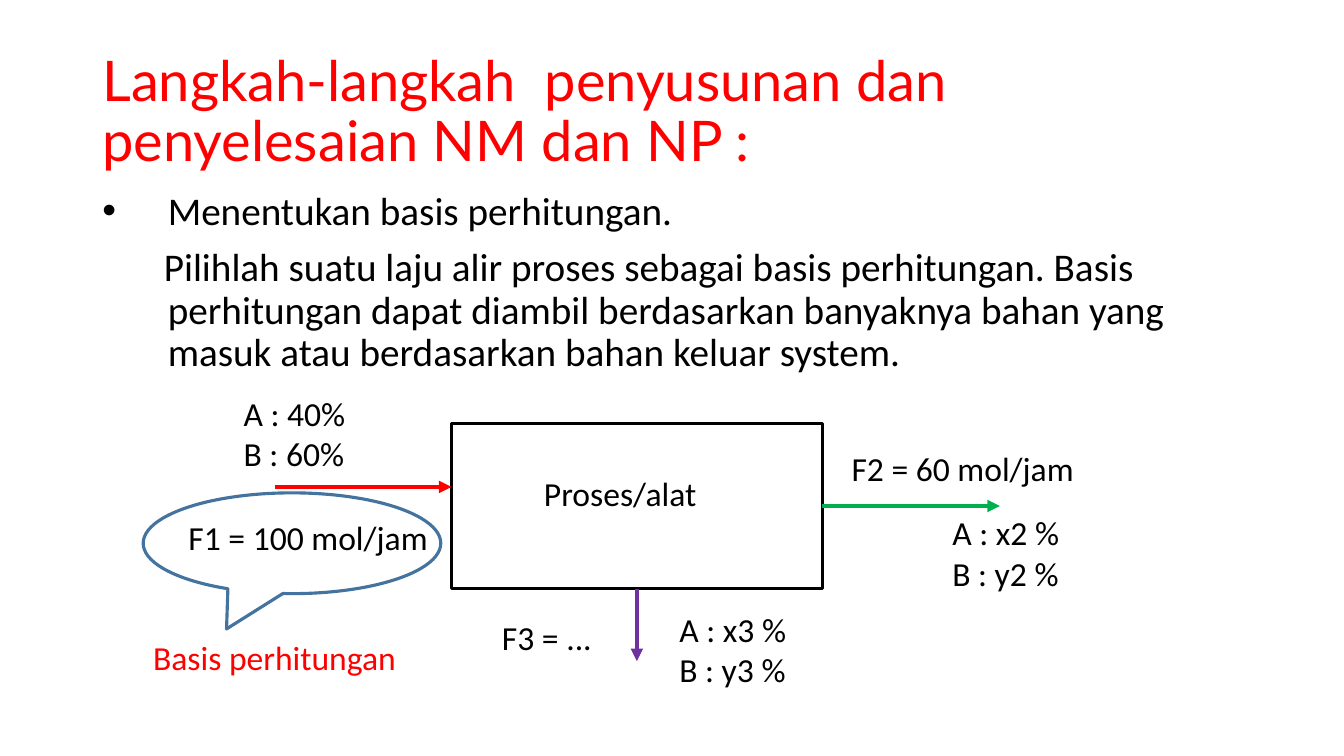
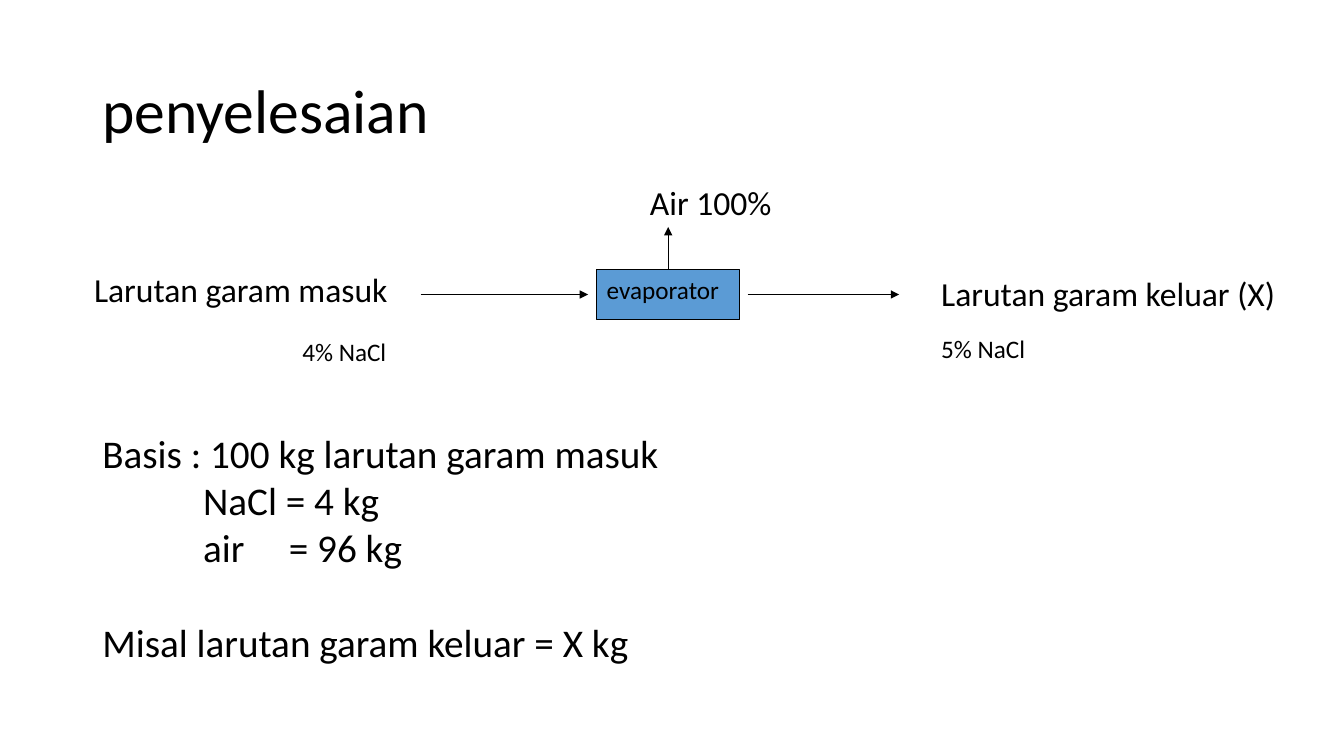
from lxml import etree
from pptx import Presentation
from pptx.dml.color import RGBColor
from pptx.enum.shapes import MSO_CONNECTOR, MSO_SHAPE as Preset
from pptx.enum.text import MSO_ANCHOR as Anchor, PP_ALIGN as Align
from pptx.oxml.ns import qn
from pptx.util import Cm, Pt

COLORS = {
    "black": "000000",
    "red": "FF0000",
    "green": "00B050",
    "purple": "7030A0",
    "outline": "43739E",
    "evaporator": "5B9BD5",
}
COLORS = {name: RGBColor.from_string(value) for name, value in COLORS.items()}
BODY_FONT = "Calibri"
TITLE_AREA = (2.33, 1.02, 29.21, 3.68)
LABEL_SIZE, NOTE_SIZE, BODY_SIZE = 24, 18, 28


def add_text(page, area, lines, size, color="black", font=BODY_FONT, spacing=1.0):
    """Add a wrapping text box with one paragraph per line."""
    box = page.shapes.add_textbox(*map(Cm, area))
    frame = box.text_frame
    frame.word_wrap = True
    for index, line in enumerate(lines):
        para = frame.paragraphs[0] if index == 0 else frame.add_paragraph()
        para.line_spacing = spacing
        span = para.add_run()
        span.text = line
        span.font.name = font
        span.font.size = Pt(size)
        span.font.color.rgb = COLORS[color]
    return frame


def add_arrow(page, start, end, color, width):
    """Add a straight arrow without a shadow."""
    arrow = page.shapes.add_connector(
        MSO_CONNECTOR.STRAIGHT, *map(Cm, start + end))
    arrow.line.color.rgb = COLORS[color]
    arrow.line.width = Pt(width)
    etree.SubElement(arrow.line._get_or_add_ln(), qn("a:tailEnd"), type="triangle")
    etree.SubElement(arrow._element.spPr, qn("a:effectLst"))
    return arrow


deck = Presentation()
deck.slide_width, deck.slide_height = Cm(33.87), Cm(19.05)
blank = deck.slide_layouts[6]

# Titles of both slides
pages = []
for title, size, color, font in [
    ("Langkah-langkah  penyusunan dan penyelesaian NM dan NP :", 40, "red", "Lato"),
    ("penyelesaian", 44, "black", BODY_FONT),
]:
    page = deck.slides.add_slide(blank)
    frame = add_text(page, TITLE_AREA, [title], size, color, font, 0.9)
    frame.vertical_anchor = Anchor.MIDDLE
    pages.append(page)
steps_page, solution_page = pages

# Slide 1: explanation, bullet followed by its indented paragraph
frame = add_text(steps_page, (2.33, 4.7, 29.21, 5.2), [
    "Menentukan basis perhitungan.",
    "Pilihlah suatu laju alir proses sebagai basis perhitungan. Basis "
    "perhitungan dapat diambil berdasarkan banyaknya bahan yang masuk atau "
    "berdasarkan bahan keluar system.",
], BODY_SIZE, spacing=0.9)
for para, indent in zip(frame.paragraphs, (-1.65, -0.1)):
    props = para._p.get_or_add_pPr()
    props.set("marL", str(Cm(1.65)))
    props.set("indent", str(Cm(indent)))
bullet_props = frame.paragraphs[0]._p.get_or_add_pPr()
etree.SubElement(bullet_props, qn("a:buFont"), typeface="Arial")
etree.SubElement(bullet_props, qn("a:buChar"), char="•")
frame.paragraphs[1].space_before = Pt(10)

# Slide 1: process box and basis callout
outlines = []
for preset, area, color in [
    (Preset.RECTANGLE, (11.38, 10.67, 9.34, 4.16), "black"),
    (Preset.OVAL_CALLOUT, (3.61, 12.42, 7.5, 2.54), "outline"),
]:
    shape = steps_page.shapes.add_shape(preset, *map(Cm, area))
    shape.shadow.inherit = False
    shape.fill.background()
    shape.line.color.rgb = COLORS[color]
    shape.line.width = Pt(2.25)
    outlines.append(shape)
process, callout = outlines
callout.adjustments[0], callout.adjustments[1] = -0.22, 0.85

# Slide 1: streams in and out
add_arrow(steps_page, (6.93, 12.27), (11.38, 12.27), "red", 3)
for start, end, color, side in [
    ((20.72, 12.75), (25.2, 12.75), "green", 3),
    ((16.05, 14.83), (16.05, 16.66), "purple", 2),
]:
    add_arrow(steps_page, start, end, color, 3).begin_connect(process, side)

# Slide 1: labels
for left, top, width, lines, color in [
    (13.46, 11.79, 5.08, ["Proses/alat"], "black"),
    (5.89, 9.78, 3.4, ["A : 40%", "B : 60%"], "black"),
    (23.75, 12.78, 3.4, ["A : x2 %", "B : y2 %"], "black"),
    (16.87, 15.21, 3.4, ["A : x3 %", "B : y3 %"], "black"),
    (4.5, 12.9, 7, ["F1 = 100 mol/jam"], "black"),
    (12.4, 15.42, 3.2, ["F3 = ..."], "black"),
    (21.21, 11.15, 7, ["F2 = 60 mol/jam"], "black"),
    (3.61, 15.93, 7, ["Basis perhitungan"], "red"),
]:
    add_text(steps_page, (left, top, width, 1.27 * len(lines)), lines,
             LABEL_SIZE, color)

# Slide 2: evaporator
evaporator = solution_page.shapes.add_shape(
    Preset.RECTANGLE, Cm(15.04), Cm(6.78), Cm(3.6), Cm(1.28))
evaporator.shadow.inherit = False
evaporator.fill.solid()
evaporator.fill.fore_color.rgb = COLORS["evaporator"]
evaporator.line.color.rgb = COLORS["black"]
evaporator.line.width = Pt(0.75)
frame = evaporator.text_frame
frame.word_wrap = False
frame.vertical_anchor = Anchor.TOP
para = frame.paragraphs[0]
para.alignment = Align.LEFT
span = para.add_run()
span.text = "evaporator"
span.font.name = BODY_FONT
span.font.size = Pt(NOTE_SIZE)
span.font.color.rgb = COLORS["black"]

# Slide 2: streams
for start, end in [((10.6, 7.42), (14.82, 7.42)), ((18.84, 7.42), (22.66, 7.42))]:
    add_arrow(solution_page, start, end, "black", 0.75)
vapour = add_arrow(solution_page, (16.84, 6.78), (16.84, 5.72), "black", 0.75)
vapour.begin_connect(evaporator, 0)

# Slide 2: labels
for left, top, width, label, size in [
    (2.12, 6.65, 8.66, "Larutan garam masuk", LABEL_SIZE),
    (23.47, 6.76, 9.6, "Larutan garam keluar (X)", LABEL_SIZE),
    (7.37, 8.36, 3.2, "4% NaCl", NOTE_SIZE),
    (23.47, 8.28, 3.2, "5% NaCl", NOTE_SIZE),
    (16.13, 4.45, 4, "Air 100%", LABEL_SIZE),
]:
    add_text(solution_page, (left, top, width, 1.2), [label], size)

# Slide 2: calculation, quantities aligned on tab stops
frame = add_text(solution_page, (2.33, 10.7, 18.5, 6.25), [
    "Basis : 100 kg larutan garam masuk",
    "\tNaCl = 4 kg",
    "\tair\t= 96 kg",
    "Misal larutan garam keluar = X kg",
], BODY_SIZE)
for para in frame.paragraphs[1:3]:
    tabs = etree.SubElement(para._p.get_or_add_pPr(), qn("a:tabLst"))
    for position in (2.54, 4.7):
        etree.SubElement(tabs, qn("a:tab"), pos=str(Cm(position)), algn="l")
frame.paragraphs[3].space_before = Pt(34)

deck.save("out.pptx")
